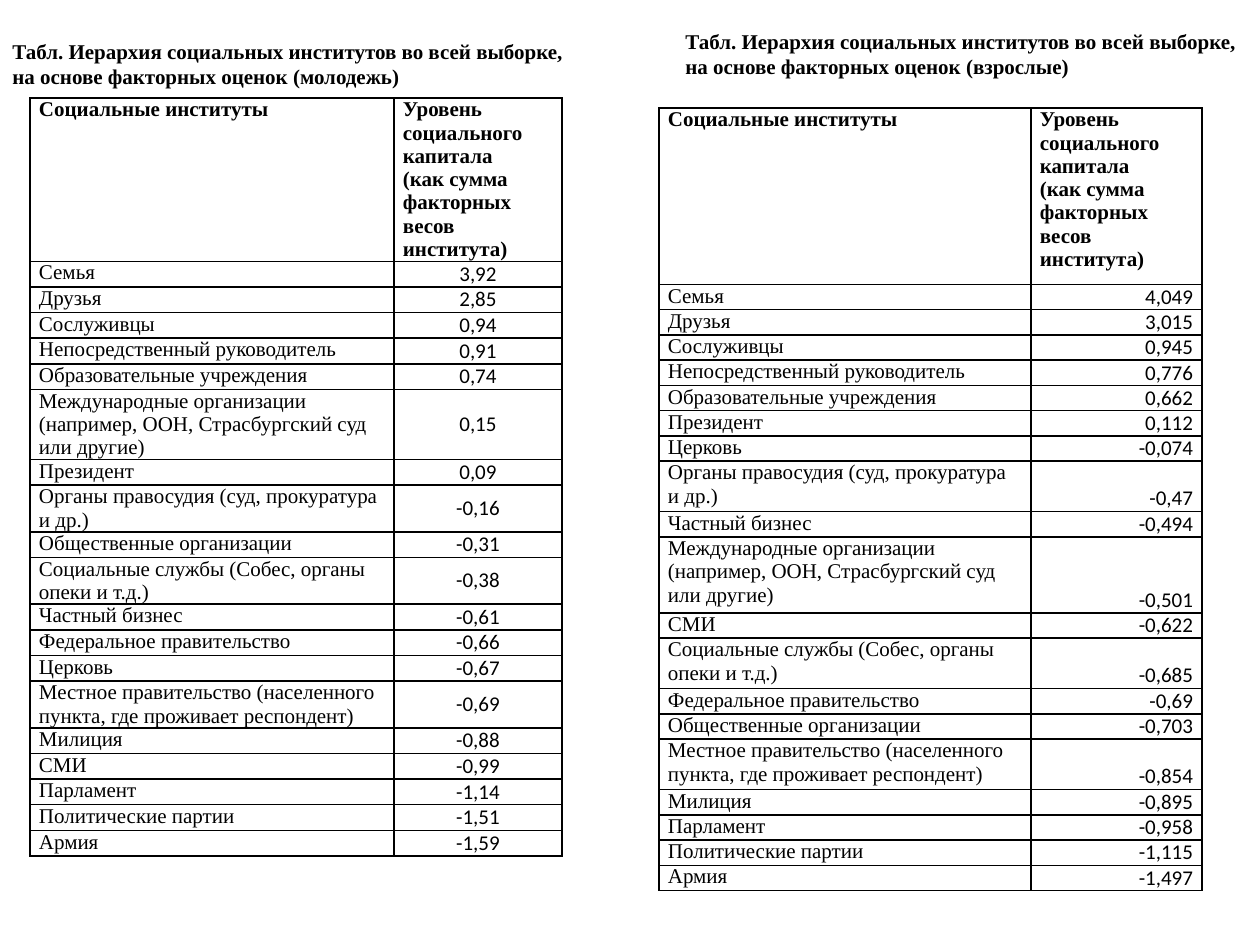
from dataclasses import dataclass

from lxml.etree import SubElement
from pptx import Presentation
from pptx.dml.color import RGBColor
from pptx.enum.text import MSO_ANCHOR, MSO_AUTO_SIZE, PP_ALIGN
from pptx.oxml.ns import qn
from pptx.slide import Slide
from pptx.table import _Cell
from pptx.text.text import TextFrame
from pptx.util import Emu, Pt

EMU_PER_PX = 914400 // 126
COLORS = {"text": "000000", "border": "000000"}
SERIF, SANS = "Times New Roman", "Calibri"
TEXT_SIZE = Pt(12)
BORDER_WIDTH = Pt(1)
CELL_INSET = 9
HEADERS = (
    "Социальные институты",
    "Уровень социального капитала\n(как сумма факторных весов института)",
)

INTERNATIONAL = "Международные организации (например, ООН, Страсбургский суд или другие)"
JUSTICE = "Органы правосудия (суд, прокуратура и др.)"
SOCIAL = "Социальные службы (Собес, органы опеки и т.д.)"
LOCAL = "Местное правительство (населенного пункта, где проживает респондент)"
LINE_COUNTS = {INTERNATIONAL: 3, JUSTICE: 2, SOCIAL: 2, LOCAL: 2}


@dataclass(frozen=True)
class Ranking:
    group: str
    caption_left: int
    caption_top: int
    left: int
    top: int
    columns: tuple[int, int]
    header_height: int
    row_heights: dict[int, int]  # by number of text lines
    alignment: PP_ALIGN
    anchor: MSO_ANCHOR
    scores: tuple[tuple[str, str], ...]


RANKINGS = (
    Ranking(
        "молодежь", 0, 32, 30, 98, (364, 168), 163, {1: 25, 2: 46, 3: 70},
        PP_ALIGN.CENTER, MSO_ANCHOR.MIDDLE,
        (
            ("Семья", "3,92"),
            ("Друзья", "2,85"),
            ("Сослуживцы", "0,94"),
            ("Непосредственный руководитель", "0,91"),
            ("Образовательные учреждения", "0,74"),
            (INTERNATIONAL, "0,15"),
            ("Президент", "0,09"),
            (JUSTICE, "-0,16"),
            ("Общественные организации", "-0,31"),
            (SOCIAL, "-0,38"),
            ("Частный бизнес", "-0,61"),
            ("Федеральное правительство", "-0,66"),
            ("Церковь", "-0,67"),
            (LOCAL, "-0,69"),
            ("Милиция", "-0,88"),
            ("СМИ", "-0,99"),
            ("Парламент", "-1,14"),
            ("Политические партии", "-1,51"),
            ("Армия", "-1,59"),
        ),
    ),
    Ranking(
        "взрослые", 673, 22, 659, 108, (372, 171), 176, {1: 25, 2: 50, 3: 76},
        PP_ALIGN.RIGHT, MSO_ANCHOR.BOTTOM,
        (
            ("Семья", "4,049"),
            ("Друзья", "3,015"),
            ("Сослуживцы", "0,945"),
            ("Непосредственный руководитель", "0,776"),
            ("Образовательные учреждения", "0,662"),
            ("Президент", "0,112"),
            ("Церковь", "-0,074"),
            (JUSTICE, "-0,47"),
            ("Частный бизнес", "-0,494"),
            (INTERNATIONAL, "-0,501"),
            ("СМИ", "-0,622"),
            (SOCIAL, "-0,685"),
            ("Федеральное правительство", "-0,69"),
            ("Общественные организации", "-0,703"),
            (LOCAL, "-0,854"),
            ("Милиция", "-0,895"),
            ("Парламент", "-0,958"),
            ("Политические партии", "-1,115"),
            ("Армия", "-1,497"),
        ),
    ),
)


def px(length: int) -> Emu:
    return Emu(length * EMU_PER_PX)


def write_text(text_frame: TextFrame, text: str, font_name: str = SERIF,
               bold: bool = False, alignment: PP_ALIGN = PP_ALIGN.LEFT) -> None:
    text_frame.text = text
    for paragraph in text_frame.paragraphs:
        paragraph.alignment = alignment
        for run in paragraph.runs:
            run.font.name = font_name
            run.font.size = TEXT_SIZE
            run.font.bold = bold
            run.font.color.rgb = RGBColor.from_string(COLORS["text"])


def format_cell(cell: _Cell, anchor: MSO_ANCHOR) -> None:
    """Set insets, anchor, four borders and an empty fill."""
    cell.margin_left = cell.margin_right = px(CELL_INSET)
    cell.margin_top = cell.margin_bottom = 0
    cell.vertical_anchor = anchor
    properties = cell._tc.get_or_add_tcPr()
    for side in ("lnL", "lnR", "lnT", "lnB"):
        line = SubElement(properties, qn(f"a:{side}"), w=str(BORDER_WIDTH))
        fill = SubElement(line, qn("a:solidFill"))
        SubElement(fill, qn("a:srgbClr"), val=COLORS["border"])
    cell.fill.background()


def add_caption(slide: Slide, ranking: Ranking) -> None:
    shape = slide.shapes.add_textbox(
        px(ranking.caption_left), px(ranking.caption_top), px(587), px(61))
    text_frame = shape.text_frame
    text_frame.word_wrap = False
    text_frame.auto_size = MSO_AUTO_SIZE.SHAPE_TO_FIT_TEXT
    write_text(
        text_frame,
        "Табл. Иерархия социальных институтов во всей выборке,\n"
        f"на основе факторных оценок ({ranking.group})",
        bold=True)


def add_ranking_table(slide: Slide, ranking: Ranking) -> None:
    heights = [ranking.header_height] + [
        ranking.row_heights[LINE_COUNTS.get(name, 1)] for name, _ in ranking.scores]
    table = slide.shapes.add_table(
        len(heights), len(ranking.columns), px(ranking.left), px(ranking.top),
        px(sum(ranking.columns)), px(sum(heights))).table
    table.horz_banding = False
    table.first_row = False
    for column, width in zip(table.columns, ranking.columns):
        column.width = px(width)
    for row, height in zip(table.rows, heights):
        row.height = px(height)

    for cell, header in zip(table.rows[0].cells, HEADERS):
        format_cell(cell, MSO_ANCHOR.TOP)
        write_text(cell.text_frame, header, bold=True)
    for index, (name, score) in enumerate(ranking.scores, start=1):
        name_cell, score_cell = table.cell(index, 0), table.cell(index, 1)
        format_cell(name_cell, MSO_ANCHOR.TOP)
        write_text(name_cell.text_frame, name)
        format_cell(score_cell, ranking.anchor)
        write_text(score_cell.text_frame, score, SANS, alignment=ranking.alignment)


def main() -> None:
    presentation = Presentation()
    presentation.slide_width = px(1260)
    presentation.slide_height = px(945)
    slide = presentation.slides.add_slide(presentation.slide_layouts[6])
    for ranking in RANKINGS:
        add_ranking_table(slide, ranking)
        add_caption(slide, ranking)
    presentation.save("out.pptx")


if __name__ == "__main__":
    main()
